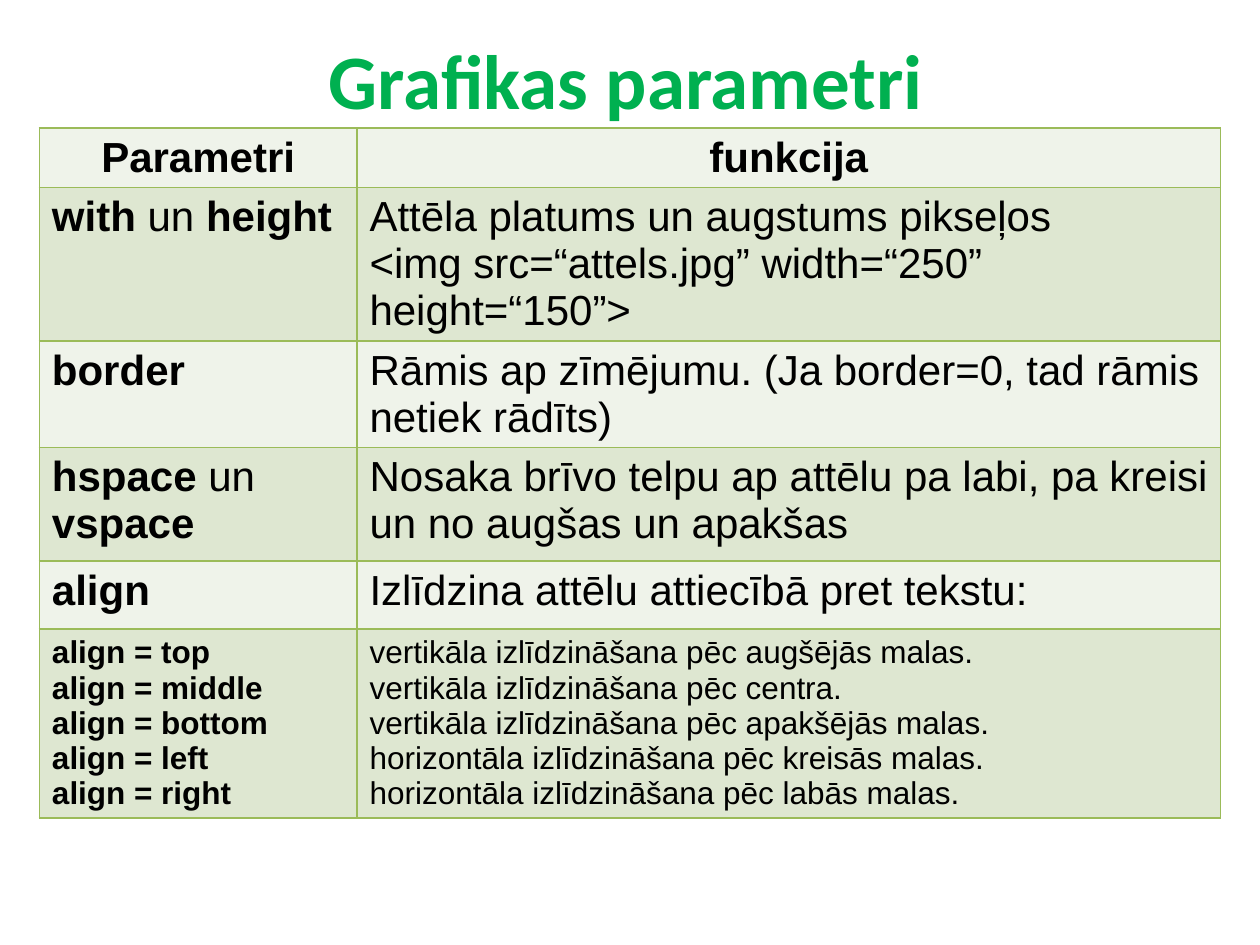
from lxml import etree
from pptx import Presentation
from pptx.dml.color import RGBColor
from pptx.enum.text import MSO_ANCHOR, PP_ALIGN
from pptx.oxml.ns import qn
from pptx.util import Pt

CENTER, LEFT = PP_ALIGN.CENTER, PP_ALIGN.LEFT
MIDDLE = MSO_ANCHOR.MIDDLE

COLORS = {
    "title": "00B050",
    "text": "000000",
    "border": "9BBB59",
    "light": "EFF3EA",
    "dark": "DEE7D1",
}
TITLE_FONT = {"name": "Calibri", "size": Pt(44), "bold": True}
BODY_FONT = {"name": "Arial", "size": Pt(24)}
DETAIL_FONT = {"name": "Arial", "size": Pt(18)}
BODY_SPACING, DETAIL_SPACING = Pt(26.8), Pt(20.1)

COLUMN_WIDTHS = (181.5, 493.5)
ROW_HEIGHTS = (34, 87.6, 61, 64.8, 38.9, 108)
ROWS = [
    (["Parametri"], ["funkcija"]),
    (["with |un |height"], [
        "Attēla platums un augstums pikseļos",
        "<img src=“attels.jpg” width=“250” height=“150”>",
    ]),
    (["border"], ["Rāmis ap zīmējumu. (Ja border=0, tad rāmis netiek rādīts)"]),
    (["hspace |un |vspace"], [
        "Nosaka brīvo telpu ap attēlu pa labi, pa kreisi un no augšas un apakšas",
    ]),
    (["align"], ["Izlīdzina attēlu attiecībā pret tekstu:"]),
    (
        [f"align = {side}" for side in ("top", "middle", "bottom", "left", "right")],
        [
            "vertikāla izlīdzināšana pēc augšējās malas.",
            "vertikāla izlīdzināšana pēc centra.",
            "vertikāla izlīdzināšana pēc apakšējās malas.",
            "horizontāla izlīdzināšana pēc kreisās malas.",
            "horizontāla izlīdzināšana pēc labās malas.",
        ],
    ),
]


def add_run(p, text, color, font):
    r = p.add_run()
    r.text = text
    for key, value in font.items():
        setattr(r.font, key, value)
    r.font.color.rgb = RGBColor.from_string(COLORS[color])


def add_title(s, x, y, w, h):
    sp = s.shapes.add_textbox(Pt(x), Pt(y), Pt(w), Pt(h))
    tf = sp.text_frame
    tf.word_wrap = True
    tf.vertical_anchor = MIDDLE
    p = tf.paragraphs[0]
    p.alignment = CENTER
    add_run(p, "Grafikas parametri", "title", TITLE_FONT)


def set_borders(cell):
    tcPr = cell._tc.get_or_add_tcPr()
    for side in ("lnL", "lnR", "lnT", "lnB"):
        ln = etree.SubElement(tcPr, qn(f"a:{side}"), w=str(Pt(1)))
        fill = etree.SubElement(ln, qn("a:solidFill"))
        etree.SubElement(fill, qn("a:srgbClr"), val=COLORS["border"])


def fill_cell(cell, lines, fill, align, font, spacing, bold):
    set_borders(cell)
    cell.fill.solid()
    cell.fill.fore_color.rgb = RGBColor.from_string(COLORS[fill])
    tf = cell.text_frame
    for i, line in enumerate(lines):
        p = tf.add_paragraph() if i else tf.paragraphs[0]
        p.alignment = align
        p.line_spacing = spacing
        for part in line.split("|"):
            add_run(p, part, "text", {**font, "bold": bold and part != "un "})


def add_parameter_table(s, x, y, w, h):
    frame = s.shapes.add_table(len(ROWS), len(COLUMN_WIDTHS), Pt(x), Pt(y), Pt(w), Pt(h))
    table = frame.table
    table.first_row = table.horz_banding = False
    for column, width in zip(table.columns, COLUMN_WIDTHS):
        column.width = Pt(width)
    for i, (row, height) in enumerate(zip(table.rows, ROW_HEIGHTS)):
        row.height = Pt(height)
        header, detail = i == 0, i == len(ROWS) - 1
        font = DETAIL_FONT if detail else BODY_FONT
        spacing = DETAIL_SPACING if detail else BODY_SPACING
        for j, lines in enumerate(ROWS[i]):
            fill_cell(table.cell(i, j), lines, "dark" if i % 2 else "light",
                      CENTER if header else LEFT, font, spacing, header or j == 0)


def main():
    prs = Presentation()
    prs.slide_width, prs.slide_height = Pt(720), Pt(540)
    s = prs.slides.add_slide(prs.slide_layouts[6])
    add_title(s, 33.8, 11, 648, 67.7)
    add_parameter_table(s, 22.5, 73.2, sum(COLUMN_WIDTHS), sum(ROW_HEIGHTS))
    prs.save("out.pptx")


if __name__ == "__main__":
    main()
